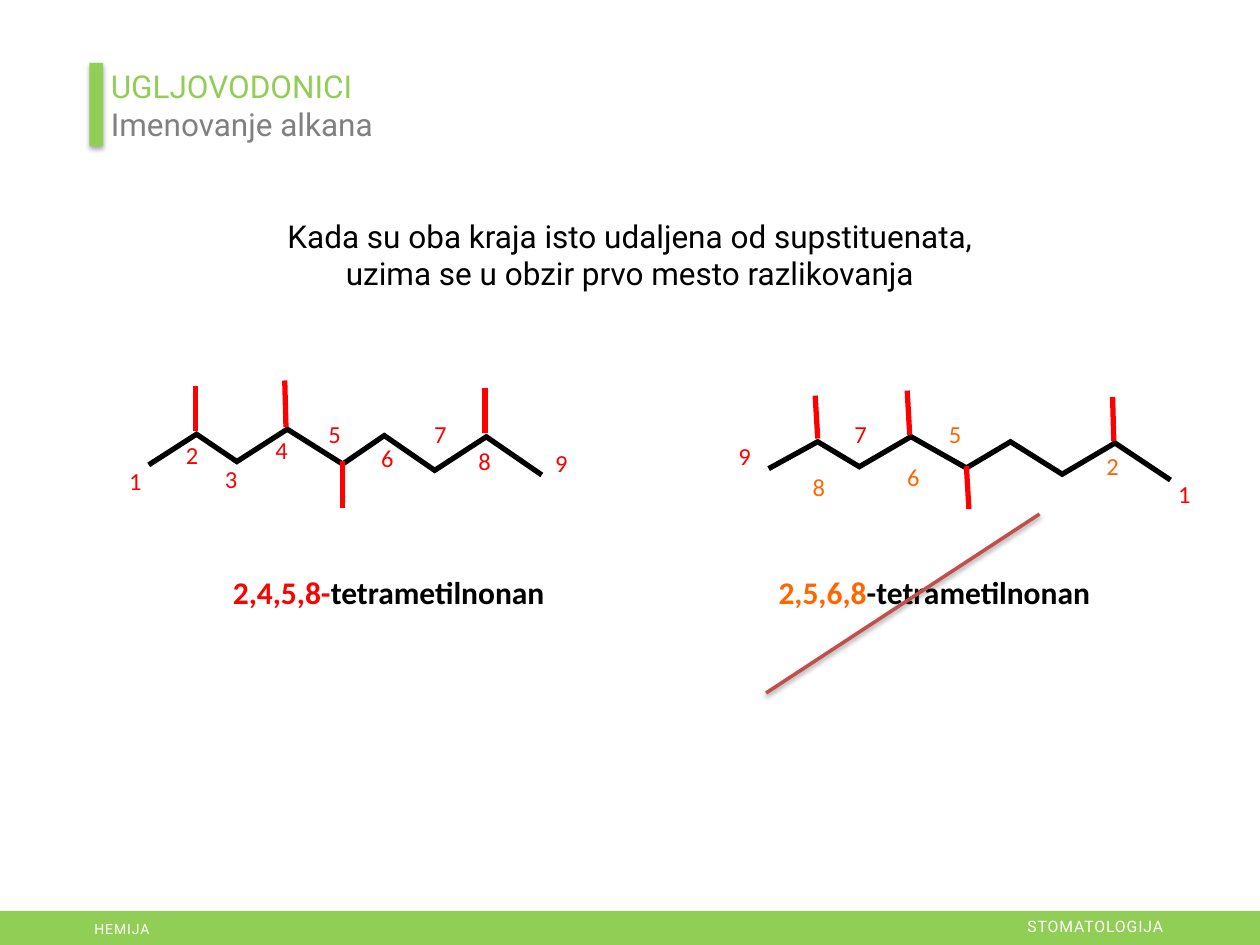
from dataclasses import dataclass
from itertools import pairwise
from math import copysign

from lxml.etree import SubElement
from pptx import Presentation
from pptx.dml.color import RGBColor
from pptx.enum.shapes import MSO_CONNECTOR, MSO_SHAPE
from pptx.enum.text import MSO_AUTO_SIZE, PP_ALIGN
from pptx.oxml.ns import qn
from pptx.util import Inches, Pt

GREEN, GREY, BLACK, WHITE = "91CE55", "808080", "000000", "FFFFFF"
RED, ORANGE, STRIKE = "FF0000", "FF6600", "C0504D"
Point = tuple[float, float]


@dataclass
class Span:
    """A piece of text in one colour."""
    text: str
    color: str


@dataclass
class Locant:
    """A carbon number and the top left corner of its box."""
    number: str
    x: float
    y: float
    color: str = RED


@dataclass
class Molecule:
    """A carbon chain with its methyl branches, numbering and name."""
    chain: list[Point]
    branches: list[tuple[Point, Point]]
    locants: list[Locant]
    locant_width: float
    name: list[Span]
    name_x: float


def rgb(color: str) -> RGBColor:
    """Turn a hex string into a colour."""
    return RGBColor.from_string(color)


def add_shadow(effects, alpha: int, distance: float) -> None:
    """Put a soft downward shadow into an effect list."""
    shadow = SubElement(effects, qn("a:outerShdw"), blurRad=str(Pt(3.1)),
                        dist=str(Pt(distance)), dir="5400000", rotWithShape="0")
    color = SubElement(shadow, qn("a:srgbClr"), val=BLACK)
    SubElement(color, qn("a:alpha"), val=str(alpha * 1000))


def add_line(shapes, start: Point, end: Point, color: str, width: float = 3):
    """Draw a straight line and return its empty effect list."""
    s = shapes.add_connector(MSO_CONNECTOR.STRAIGHT,
                             *(Inches(v) for v in (*start, *end)))
    s.line.color.rgb = rgb(color)
    s.line.width = Pt(width)
    return SubElement(s._element.spPr, qn("a:effectLst"))


def add_bar(shapes, x: float, y: float, w: float, h: float):
    """Draw a plain green rectangle."""
    s = shapes.add_shape(MSO_SHAPE.RECTANGLE, *(Inches(v) for v in (x, y, w, h)))
    s.shadow.inherit = False
    s.fill.solid()
    s.fill.fore_color.rgb = rgb(GREEN)
    s.line.fill.background()
    return s


def add_text(shapes, box: tuple[float, float, float, float], lines: list[list[Span]],
             size: float, font: str = "Roboto", align: PP_ALIGN = PP_ALIGN.LEFT,
             bold: bool = False, wrap: bool = True, spacing: float = 0):
    """Write lines of coloured spans in a text box."""
    tf = shapes.add_textbox(*(Inches(v) for v in box)).text_frame
    tf.word_wrap = wrap
    tf.auto_size = MSO_AUTO_SIZE.SHAPE_TO_FIT_TEXT
    for i, spans in enumerate(lines):
        p = tf.add_paragraph() if i else tf.paragraphs[0]
        p.alignment = align
        for span in spans:
            r = p.add_run()
            r.text = span.text
            r.font.name, r.font.size, r.font.bold = font, Pt(size), bold
            r.font.color.rgb = rgb(span.color)
            if spacing:
                r._r.get_or_add_rPr().set("spc", str(int(spacing * 100)))
    return tf


def add_molecule(shapes, m: Molecule) -> None:
    """Draw a skeletal formula, overlapping its bonds slightly at each joint."""
    last = len(m.chain) - 2
    for i, ((x1, y1), (x2, y2)) in enumerate(pairwise(m.chain)):
        dx, dy = 0.01, copysign(0.01, y2 - y1)
        start = (x1 - dx, y1 - dy) if i else (x1, y1)
        end = (x2 + dx, y2 + dy) if i < last else (x2, y2)
        add_line(shapes, start, end, BLACK)
    for start, end in m.branches:
        add_line(shapes, start, end, RED)
    for n in m.locants:
        add_text(shapes, (n.x, n.y, m.locant_width, 0.33), [[Span(n.number, n.color)]],
                 14, "Calibri", PP_ALIGN.CENTER)
    add_text(shapes, (m.name_x, 4.5, 2.69, 0.4), [m.name], 18, "Calibri",
             PP_ALIGN.CENTER, bold=True, wrap=False)


CORRECT = Molecule(
    chain=[(1.18, 3.69), (1.56, 3.45), (1.88, 3.66), (2.28, 3.41), (2.72, 3.68),
           (3.05, 3.46), (3.45, 3.73), (3.86, 3.47), (4.3, 3.77)],
    branches=[((1.55, 3.42), (1.55, 3.06)), ((2.27, 3.39), (2.26, 3.02)),
              ((2.72, 4.03), (2.72, 3.66)), ((3.85, 3.44), (3.85, 3.08))],
    locants=[Locant("1", 0.85, 3.65), Locant("2", 1.3, 3.44), Locant("3", 1.61, 3.63),
             Locant("4", 2.01, 3.4), Locant("5", 2.43, 3.28), Locant("6", 2.85, 3.47),
             Locant("7", 3.27, 3.28), Locant("8", 3.62, 3.49), Locant("9", 4.23, 3.51)],
    locant_width=0.45,
    name=[Span("2,4,5,8-", RED), Span("tetrametilnonan", BLACK)],
    name_x=1.74,
)
WRONG = Molecule(
    chain=[(6.1, 3.72), (6.49, 3.51), (6.82, 3.7), (7.23, 3.47), (7.67, 3.71),
           (8.02, 3.51), (8.43, 3.76), (8.85, 3.52), (9.29, 3.81)],
    branches=[((6.49, 3.48), (6.47, 3.14)), ((7.22, 3.45), (7.2, 3.1)),
              ((7.69, 4.04), (7.67, 3.7)), ((8.84, 3.5), (8.83, 3.15))],
    locants=[Locant("9", 5.68, 3.45), Locant("8", 6.27, 3.7, ORANGE),
             Locant("7", 6.6, 3.28), Locant("6", 7.02, 3.62, ORANGE),
             Locant("5", 7.35, 3.28, ORANGE), Locant("2", 8.6, 3.53, ORANGE),
             Locant("1", 9.17, 3.75)],
    locant_width=0.46,
    name=[Span("2,5,6,8", ORANGE), Span("-tetrametilnonan", BLACK)],
    name_x=6.07,
)


def main() -> None:
    """Build the slide and save it."""
    prs = Presentation()
    prs.slide_width, prs.slide_height = Inches(10), Inches(7.5)
    shapes = prs.slides.add_slide(prs.slide_layouts[6]).shapes

    for molecule in (CORRECT, WRONG):
        add_molecule(shapes, molecule)

    tf = add_text(shapes, (0.83, 0.5, 8.34, 0.66),
                  [[Span("UGLJOVODONICI", GREEN)], [Span("Imenovanje alkana", GREY)]], 18)
    tf.margin_left = tf.margin_right = Inches(0.05)
    tf.margin_top = tf.margin_bottom = Inches(0.03)
    accent = add_bar(shapes, 0.71, 0.5, 0.11, 0.66)
    add_shadow(accent._element.spPr.find(qn("a:effectLst")), 35, 1.8)

    add_bar(shapes, 0, 7.23, 10, 0.27)
    add_text(shapes, (0.65, 7.26, 4.6, 0.24), [[Span("HEMIJA", WHITE)]], 8, spacing=0.5)
    add_text(shapes, (6.38, 7.23, 2.95, 0.25), [[Span("STOMATOLOGIJA", WHITE)]], 9,
             align=PP_ALIGN.RIGHT, spacing=0.5)

    rule = ("Kada su oba kraja isto udaljena od supstituenata, "
            "uzima se u obzir prvo mesto razlikovanja")
    add_text(shapes, (1.96, 1.67, 6.08, 0.71), [[Span(rule, BLACK)]], 18,
             align=PP_ALIGN.CENTER)
    add_shadow(add_line(shapes, (6.08, 5.5), (8.25, 4.08), STRIKE, 2), 38, 1.6)
    prs.save("out.pptx")


if __name__ == "__main__":
    main()
